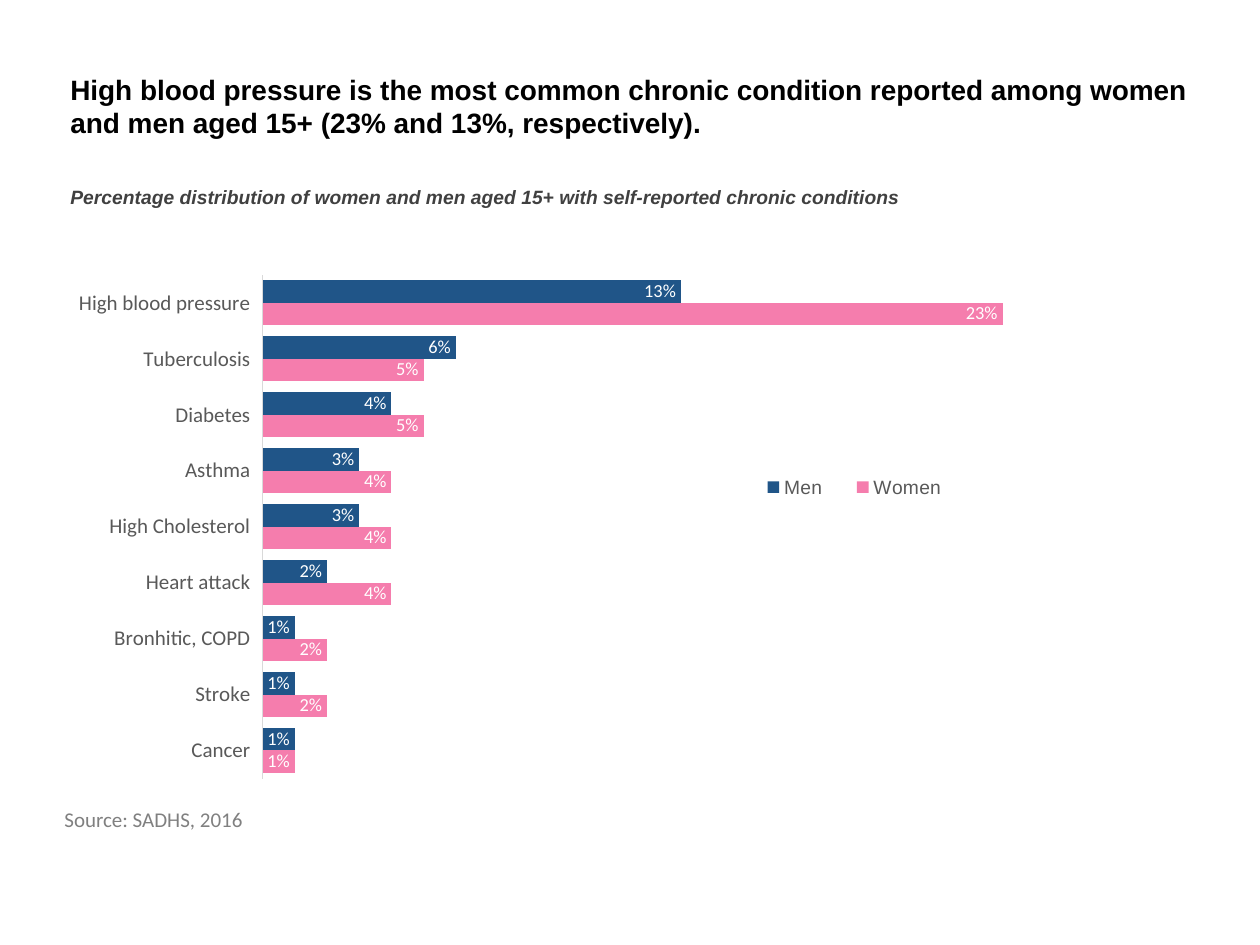
from dataclasses import dataclass
from pptx import Presentation
from pptx.chart.data import CategoryChartData
from pptx.dml.color import RGBColor
from pptx.enum.chart import XL_CHART_TYPE as ChartType
from pptx.enum.chart import XL_LABEL_POSITION as LabelPosition
from pptx.enum.chart import XL_LEGEND_POSITION as LegendPosition
from pptx.enum.chart import XL_TICK_LABEL_POSITION as TickLabels
from pptx.enum.chart import XL_TICK_MARK as TickMark
from pptx.enum.text import MSO_AUTO_SIZE as AutoSize
from pptx.oxml import parse_xml
from pptx.oxml.ns import nsdecls, qn
from pptx.util import Emu, Pt


@dataclass(frozen=True)
class Theme:
    heading_font: str = "Arial"
    body_font: str = "Calibri"
    black: str = "000000"
    dark: str = "404040"
    label: str = "595959"
    muted: str = "808080"
    axis: str = "D9D9D9"
    white: str = "FFFFFF"
    women: str = "F57DAD"
    men: str = "205588"
    title_size: float = 16
    body_size: float = 12
    small_size: float = 11
    value_size: float = 10.5


THEME = Theme()
PX = 914400 / 126
PAGE = (1260, 945)

TEXTS = [
    ("Percentage distribution of women and men aged 15+ with self-reported chronic conditions",
     (58, 179, 878, 37), THEME.heading_font, THEME.small_size, THEME.dark, True, True),
    ("High blood pressure is the most common chronic condition reported among women "
     "and men aged 15+ (23% and 13%, respectively).",
     (58, 66, 1174, 81), THEME.heading_font, THEME.title_size, THEME.black, True, False),
    ("Source: SADHS, 2016",
     (52, 800, 348, 38), THEME.body_font, THEME.body_size, THEME.muted, False, False),
]

CONDITIONS = [
    ("Cancer", 1, 1),
    ("Stroke", 2, 1),
    ("Bronhitic, COPD", 2, 1),
    ("Heart attack", 4, 2),
    ("High Cholesterol", 4, 3),
    ("Asthma", 4, 3),
    ("Diabetes", 5, 4),
    ("Tuberculosis", 5, 6),
    ("High blood pressure", 23, 13),
]
CHART_BOX = (55, 254, 1071, 566)
PLOT_BOX = (263, 275, 804, 504)
LEGEND_BOX = (739, 469, 230, 36)


def px(*lengths):
    return [Emu(round(length * PX)) for length in lengths]


def style(font, name, size, color, bold=False, italic=False):
    font.name, font.size = name, Pt(size)
    font.bold, font.italic = bold, italic
    font.color.rgb = RGBColor.from_string(color)


def place(element, box, index, inner=False):
    left, top, width, height = CHART_BOX
    shares = {
        "x": (box[0] - left) / width,
        "y": (box[1] - top) / height,
        "w": box[2] / width,
        "h": box[3] / height,
    }
    target = '<c:layoutTarget val="inner"/>' if inner else ""
    modes = '<c:xMode val="edge"/><c:yMode val="edge"/>'
    sizes = "".join(f'<c:{key} val="{share:.3f}"/>' for key, share in shares.items())
    for layout in element.findall(qn("c:layout")):
        element.remove(layout)
    element.insert(index, parse_xml(
        f'<c:layout {nsdecls("c")}><c:manualLayout>{target}{modes}{sizes}'
        "</c:manualLayout></c:layout>"))


def add_text(page, text, bounds, name, size, color, bold, italic):
    frame = page.shapes.add_textbox(*px(*bounds)).text_frame
    frame.word_wrap = True
    frame.auto_size = AutoSize.SHAPE_TO_FIT_TEXT
    frame.text = text
    style(frame.paragraphs[0].runs[0].font, name, size, color, bold, italic)


def add_conditions_chart(page):
    names, women, men = zip(*CONDITIONS)
    data = CategoryChartData(number_format="0\\%")
    data.categories = names
    data.add_series("Women", women)
    data.add_series("Men", men)
    chart = page.shapes.add_chart(ChartType.BAR_CLUSTERED, *px(*CHART_BOX), data).chart
    chart.has_title = False
    style(chart.font, THEME.heading_font, THEME.small_size, THEME.label)

    plot = chart.plots[0]
    plot.gap_width, plot.overlap = 50, 0
    plot.vary_by_categories = False
    for series, color in zip(plot.series, (THEME.women, THEME.men)):
        series.format.fill.solid()
        series.format.fill.fore_color.rgb = RGBColor.from_string(color)
        labels = series.data_labels
        labels.show_value = True
        labels.position = LabelPosition.INSIDE_END
        labels.number_format, labels.number_format_is_linked = "0\\%", False
        style(labels.font, THEME.body_font, THEME.value_size, THEME.white)

    categories = chart.category_axis
    categories.major_tick_mark = categories.minor_tick_mark = TickMark.NONE
    categories.tick_label_position = TickLabels.LOW
    categories.format.line.width = Pt(0.75)
    categories.format.line.color.rgb = RGBColor.from_string(THEME.axis)
    style(categories.tick_labels.font, THEME.body_font, THEME.body_size, THEME.label)
    values = chart.value_axis
    values.visible = values.has_major_gridlines = False
    values.minimum_scale, values.maximum_scale = 0, 25

    chart.has_legend = True
    legend = chart.legend
    legend.position = LegendPosition.RIGHT
    legend.include_in_layout = True
    style(legend.font, THEME.heading_font, THEME.small_size, THEME.label)
    place(chart.element.find(".//" + qn("c:plotArea")), PLOT_BOX, 0, inner=True)
    place(chart.element.find(".//" + qn("c:legend")), LEGEND_BOX, 1)


def main():
    deck = Presentation()
    deck.slide_width, deck.slide_height = px(*PAGE)
    page = deck.slides.add_slide(deck.slide_layouts[6])
    add_conditions_chart(page)
    for entry in TEXTS:
        add_text(page, *entry)
    deck.save("out.pptx")


if __name__ == "__main__":
    main()
